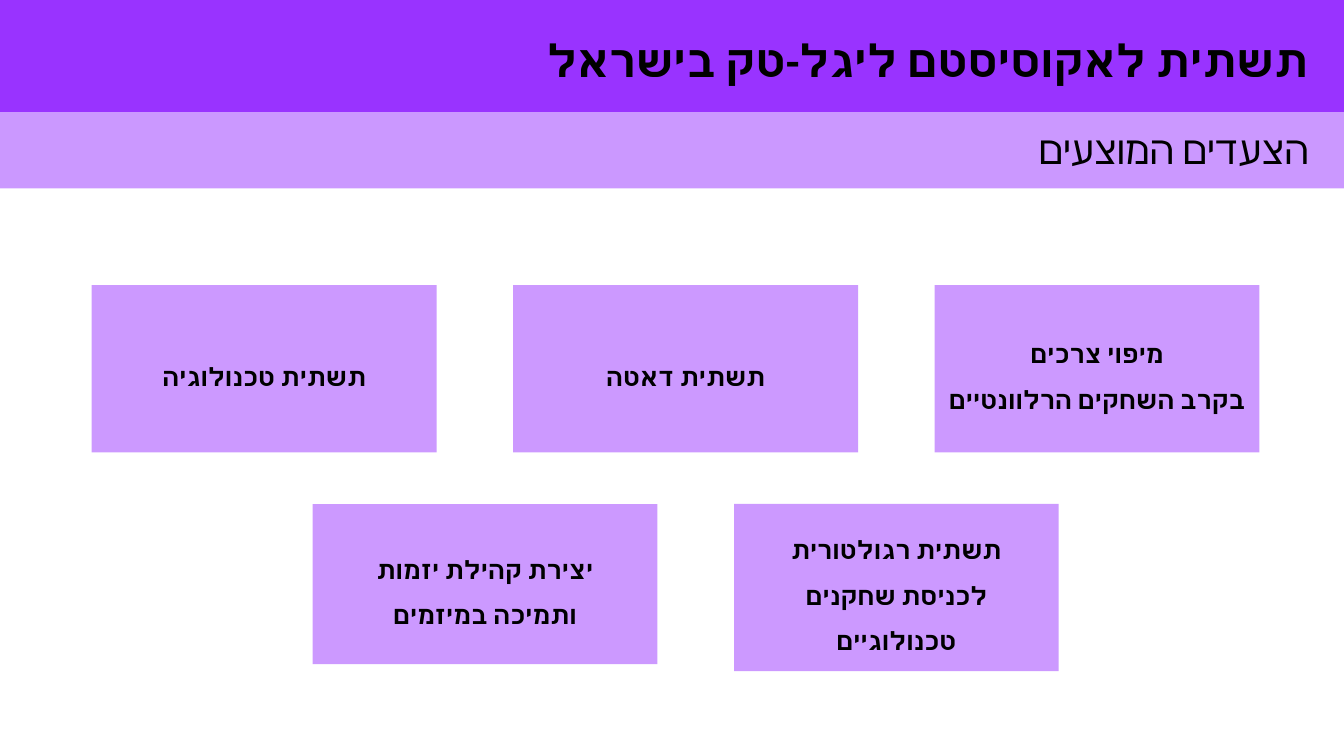
from pptx import Presentation
from pptx.dml.color import RGBColor
from pptx.enum.shapes import MSO_SHAPE
from pptx.enum.text import MSO_ANCHOR, MSO_AUTO_SIZE, PP_ALIGN
from pptx.oxml.ns import qn
from pptx.util import Inches, Pt
from lxml import etree

RECTANGLE = MSO_SHAPE.RECTANGLE
TOP, MIDDLE = MSO_ANCHOR.TOP, MSO_ANCHOR.MIDDLE
RIGHT, CENTER = PP_ALIGN.RIGHT, PP_ALIGN.CENTER
NO_AUTOFIT = MSO_AUTO_SIZE.NONE

PURPLE = RGBColor(0x99, 0x33, 0xFF)
LILAC = RGBColor(0xCC, 0x99, 0xFF)
BLACK = RGBColor(0, 0, 0)
FONT = "Calibri"
TITLE_ONLY = 5

SLIDE_WIDTH, SLIDE_HEIGHT = 13.33, 7.5
COLUMN_PITCH = 4.18

# Rows of steps: left, top, then (width, height, lines) from left to right
STEP_ROWS = [
    (0.91, 2.83, [
        (3.42, 1.66, ["תשתית טכנולוגיה"]),
        (3.42, 1.66, ["תשתית דאטה"]),
        (3.22, 1.66, ["מיפוי צרכים", "בקרב השחקים הרלוונטיים"]),
    ]),
    (3.1, 5, [
        (3.42, 1.59, ["יצירת קהילת יזמות", "ותמיכה במיזמים"]),
        (3.22, 1.66, ["תשתית רגולטורית", "לכניסת שחקנים טכנולוגיים"]),
    ]),
]


def write_hebrew(frame, lines, size, bold, align, anchor, spacing=1.0):
    frame.word_wrap = True
    frame.auto_size = NO_AUTOFIT
    frame.vertical_anchor = anchor
    frame.text = "\n".join(lines)
    for paragraph in frame.paragraphs:
        paragraph.alignment = align
        paragraph.line_spacing = spacing
        font = paragraph.font
        font.size, font.bold, font.name = Pt(size), bold, FONT
        font.color.rgb = BLACK
        # Right-to-left direction and complex-script typeface
        properties = paragraph._p.get_or_add_pPr()
        properties.set("rtl", "1")
        defaults = properties.find(qn("a:defRPr"))
        etree.SubElement(defaults, qn("a:cs")).set("typeface", FONT)


def add_block(slide, left, top, width, height, color):
    block = slide.shapes.add_shape(RECTANGLE, Inches(left), Inches(top),
                                   Inches(width), Inches(height))
    block.shadow.inherit = False
    block.fill.solid()
    block.fill.fore_color.rgb = color
    block.line.fill.background()
    return block


def add_title_band(slide, left, top, width, height):
    band = add_block(slide, left, top, width, height, PURPLE)
    title = slide.shapes.title
    title.left, title.top = Inches(left + 1.41), Inches(top + 0.27)
    title.width, title.height = Inches(11.67), Inches(0.64)
    write_hebrew(title.text_frame, ["תשתית לאקוסיסטם ליגל-טק בישראל"],
                 32, True, RIGHT, TOP)
    band._element.addnext(title._element)  # title in front of its band


def add_subtitle_band(slide, left, top, width, height):
    band = add_block(slide, left, top, width, height, PURPLE)
    band_color = band._element.spPr.find(qn("a:solidFill"))[0]
    etree.SubElement(band_color, qn("a:alpha")).set("val", "50000")
    subtitle = slide.shapes.add_textbox(Inches(left + 1.41), Inches(top + 0.08),
                                        Inches(11.67), Inches(0.57))
    write_hebrew(subtitle.text_frame, ["הצעדים המוצעים"], 28, False, RIGHT, TOP)


def add_step_row(slide, left, top, steps):
    for column, (width, height, lines) in enumerate(steps):
        step = add_block(slide, left + column * COLUMN_PITCH, top,
                         width, height, LILAC)
        write_hebrew(step.text_frame, lines, 18, True, CENTER, MIDDLE, 1.5)


def main():
    presentation = Presentation()
    presentation.slide_width = Inches(SLIDE_WIDTH)
    presentation.slide_height = Inches(SLIDE_HEIGHT)
    slide = presentation.slides.add_slide(presentation.slide_layouts[TITLE_ONLY])

    # Heading bands
    add_title_band(slide, 0, 0, SLIDE_WIDTH, 1.11)
    add_subtitle_band(slide, 0, 1.11, SLIDE_WIDTH, 0.76)

    # Proposed steps
    for left, top, steps in STEP_ROWS:
        add_step_row(slide, left, top, steps)

    presentation.save("out.pptx")


if __name__ == "__main__":
    main()
